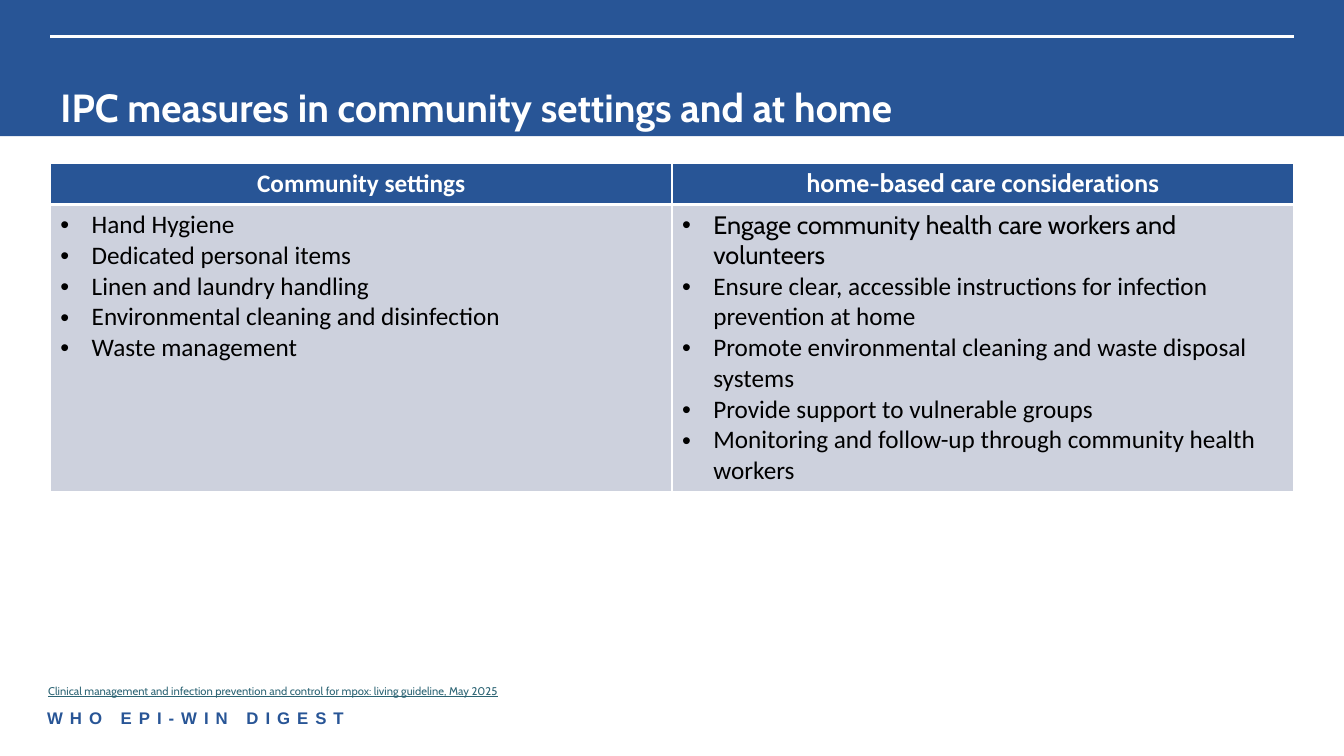
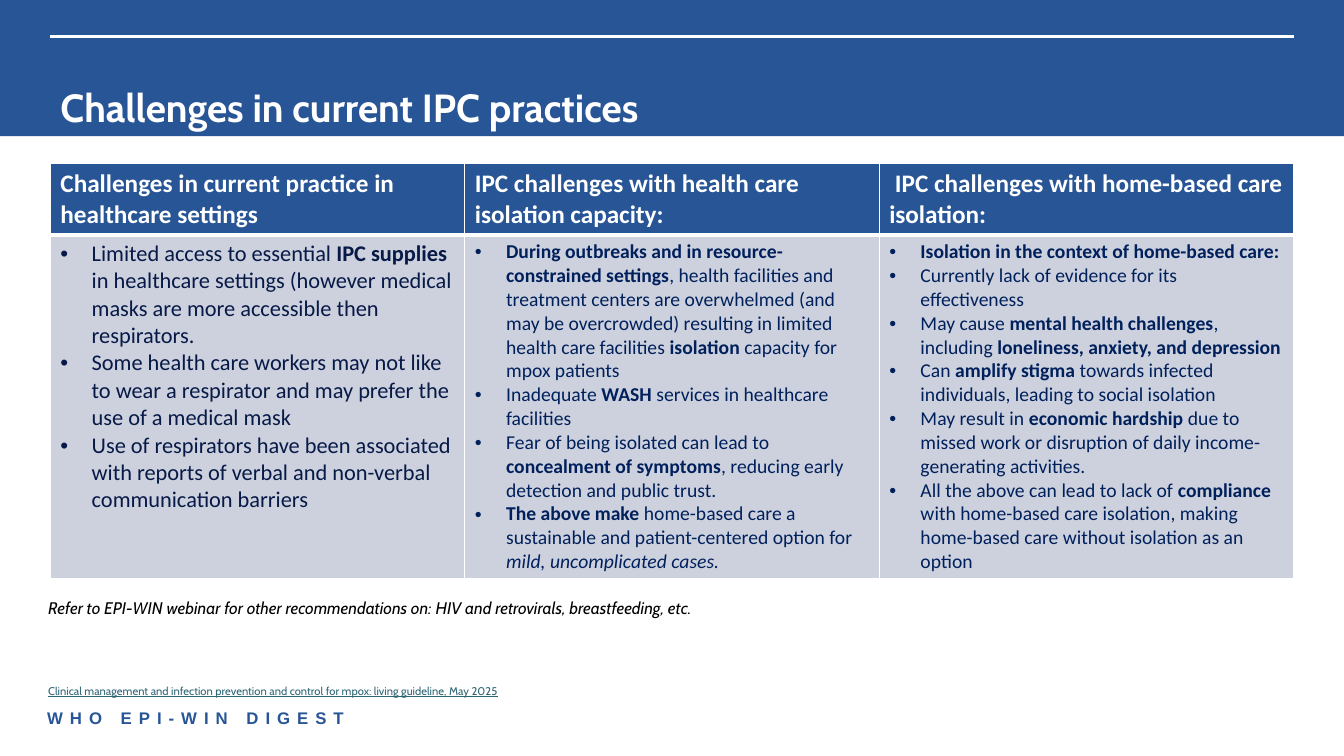
from dataclasses import dataclass
from typing import Any, Optional

import pptx
import pptx.dml.color
import pptx.enum.shapes
import pptx.enum.text
import pptx.oxml.ns
import pptx.oxml.xmlchemy
import pptx.util
from lxml import etree

RGBColor = pptx.dml.color.RGBColor
Inches = pptx.util.Inches
Pt = pptx.util.Pt
PP_ALIGN = pptx.enum.text.PP_ALIGN
MSO_ANCHOR = pptx.enum.text.MSO_ANCHOR
qn = pptx.oxml.ns.qn

BLUE = RGBColor(0x28, 0x55, 0x96)
WHITE = RGBColor(0xFF, 0xFF, 0xFF)
BLACK = RGBColor(0, 0, 0)
PALE = RGBColor(0xCD, 0xD1, 0xDD)
TEAL = RGBColor(0x2C, 0x64, 0x74)
NAVY = RGBColor(0x07, 0x19, 0x47)
DEEP_BLUE = RGBColor(0x00, 0x20, 0x5C)

TITLE_ONLY = 5
WIDTH = 13.33
MARGIN = 0.5
CONTENT_W = WIDTH - 2 * MARGIN
BAND_H = 1.35
TABLE_TOP = 1.62
BULLET_INDENT = 0.31

SOURCE = ("Clinical management and infection prevention and control for mpox: "
          "living guideline, May 2025")


@dataclass(frozen=True)
class Run:
    text: str
    bold: bool = False
    italic: bool = False
    font: str = "Calibri"


@dataclass(frozen=True)
class Column:
    heading: Run
    items: list[list[Run]]
    size: float = 18
    color: RGBColor = BLACK


@dataclass(frozen=True)
class TableSlide:
    title: str
    columns: list[Column]
    row_heights: tuple[float, float]
    heading_align: PP_ALIGN = PP_ALIGN.LEFT
    note: Optional[str] = None


def plain(text: str) -> Run:
    return Run(text)


def bold(text: str) -> Run:
    return Run(text, bold=True)


COMMUNITY = TableSlide(
    "IPC measures in community settings and at home",
    [
        Column(bold("Community settings"), [
            [plain("Hand Hygiene")],
            [plain("Dedicated personal items")],
            [plain("Linen and laundry handling")],
            [plain("Environmental cleaning and disinfection")],
            [plain("Waste management")],
        ]),
        Column(Run("home-based care considerations", bold=True, font="Cabin"), [
            [Run("Engage community health care workers and volunteers", font="Cabin")],
            [plain("Ensure clear, accessible instructions for infection prevention at home")],
            [plain("Promote environmental cleaning and waste disposal systems")],
            [plain("Provide support to vulnerable groups")],
            [plain("Monitoring and follow-up through community health workers")],
        ]),
    ],
    row_heights=(0.41, 2.8),
    heading_align=PP_ALIGN.CENTER,
)

CHALLENGES = TableSlide(
    "Challenges in current IPC practices",
    [
        Column(bold("Challenges in current practice in healthcare settings"), [
            [plain("Limited access to essential "), bold("IPC supplies "),
             plain("in healthcare settings (however medical masks are more "
                   "accessible then respirators.")],
            [plain("Some health care workers may not like to wear a respirator "
                   "and may prefer the use of a medical mask")],
            [plain("Use of respirators have been associated with reports of "
                   "verbal and non-verbal communication barriers")],
        ], 16, NAVY),
        Column(bold("IPC challenges with health care isolation capacity:"), [
            [bold("During outbreaks and in resource-constrained settings"),
             plain(", health facilities and treatment centers are overwhelmed "
                   "(and may be overcrowded) resulting in limited health care facilities "),
             bold("isolation"), plain(" capacity for mpox patients")],
            [plain("Inadequate "), bold("WASH"), plain(" services in healthcare facilities")],
            [plain("Fear of being isolated can lead to "), bold("concealment of symptoms"),
             plain(", reducing early detection and public trust.")],
            [bold("The above make "),
             plain("home-based care a sustainable and patient-centered option for "),
             Run("mild, uncomplicated cases.", italic=True)],
        ], 14, DEEP_BLUE),
        Column(bold(" IPC challenges with home-based care isolation:"), [
            [bold("Isolation in the context of home-based care:")],
            [plain("Currently lack of evidence for its effectiveness")],
            [plain("May cause "), bold("mental health challenges"), plain(", including "),
             bold("loneliness, anxiety, and depression")],
            [plain("Can "), bold("amplify stigma"),
             plain(" towards infected individuals, leading to social isolation")],
            [plain("May result in "), bold("economic hardship"),
             plain(" due to missed work or disruption of daily income-generating activities.")],
            [plain("All the above can lead to lack of "), bold("compliance "),
             plain("with home-based care isolation, making home-based care "
                   "without isolation as an option")],
        ], 14, DEEP_BLUE),
    ],
    row_heights=(0.71, 3.36),
    note="Refer to EPI-WIN webinar for other recommendations on: "
         "HIV and retrovirals, breastfeeding, etc.",
)


def add_run(p: Any, text: str, *, size: float, color: RGBColor, font: str = "Cabin",
            bold: bool = False, italic: bool = False, underline: bool = False,
            spacing: float = 0) -> None:
    """Append formatted text to a paragraph; spacing is letter spacing in points."""
    r = p.add_run()
    r.text = text
    r.font.size, r.font.name = Pt(size), font
    r.font.bold, r.font.italic, r.font.underline = bold, italic, underline
    r.font.color.rgb = color
    if spacing:
        r.font._element.set("spc", str(int(spacing * 100)))


def add_label(slide: Any, left: float, top: float, width: float, height: float,
              text: str, **style: Any) -> None:
    sp = slide.shapes.add_textbox(Inches(left), Inches(top), Inches(width), Inches(height))
    tf = sp.text_frame
    tf.word_wrap = True
    add_run(tf.paragraphs[0], text, **style)


def add_bullet(p: Any) -> None:
    indent = Inches(BULLET_INDENT)
    p_pr = p._p.get_or_add_pPr()
    p_pr.set("marL", str(indent))
    p_pr.set("indent", str(-indent))
    etree.SubElement(p_pr, qn("a:buFont")).set("typeface", "Arial")
    etree.SubElement(p_pr, qn("a:buChar")).set("char", "•")


def set_borders(cell: Any, top: float = 1, bottom: float = 1) -> None:
    """Give a cell white borders; widths in points, sides always 1."""
    tc_pr = cell._tc.get_or_add_tcPr()
    sides = {"lnL": 1, "lnR": 1, "lnT": top, "lnB": bottom}
    for i, (tag, width) in enumerate(sides.items()):
        ln = etree.Element(qn(f"a:{tag}"), w=str(Pt(width)))
        fill = etree.SubElement(ln, qn("a:solidFill"))
        etree.SubElement(fill, qn("a:srgbClr")).set("val", str(WHITE))
        tc_pr.insert(i, ln)


def fill_cell(cell: Any, color: RGBColor) -> Any:
    cell.fill.solid()
    cell.fill.fore_color.rgb = color
    return cell.text_frame


def add_comparison_table(slide: Any, content: TableSlide) -> None:
    columns = content.columns
    table = slide.shapes.add_table(
        2, len(columns), Inches(MARGIN), Inches(TABLE_TOP),
        Inches(CONTENT_W), Inches(sum(content.row_heights))).table
    table.horz_banding = False
    for row, height in zip(table.rows, content.row_heights):
        row.height = Inches(height)
    for i, column in enumerate(columns):
        table.columns[i].width = Inches(CONTENT_W / len(columns))
        head, body = table.cell(0, i), table.cell(1, i)

        p = fill_cell(head, BLUE).paragraphs[0]
        p.alignment = content.heading_align
        add_run(p, column.heading.text, size=18, color=WHITE,
                font=column.heading.font, bold=True)
        set_borders(head, bottom=3)

        tf = fill_cell(body, PALE)
        for j, item in enumerate(column.items):
            p = tf.add_paragraph() if j else tf.paragraphs[0]
            add_bullet(p)
            for run in item:
                add_run(p, run.text, size=column.size, color=column.color,
                        font=run.font, bold=run.bold, italic=run.italic)
        set_borders(body, top=3)


def add_frame(slide: Any) -> None:
    """Draw the footer, the title band and the rule across it."""
    add_label(slide, 0.37, 6.97, 5.2, 0.3, "WHO EPI-WIN DIGEST",
              size=12, color=BLUE, font="Arial", bold=True, spacing=5)
    band = slide.shapes.add_shape(pptx.enum.shapes.MSO_SHAPE.RECTANGLE,
                                  0, 0, Inches(WIDTH), Inches(BAND_H))
    band.shadow.inherit = False
    band.fill.solid()
    band.fill.fore_color.rgb = BLUE
    band.line.fill.background()
    rule = slide.shapes.add_connector(
        pptx.enum.shapes.MSO_CONNECTOR.STRAIGHT,
        Inches(MARGIN), Inches(0.36), Inches(WIDTH - MARGIN), Inches(0.36))
    rule.line.color.rgb = WHITE
    rule.line.width = Pt(2.25)
    etree.SubElement(rule._element.spPr, qn("a:effectLst"))


def set_title(slide: Any, text: str) -> None:
    """Format the title placeholder and bring it in front of the band."""
    sp = slide.shapes.title
    sp.left, sp.top = Inches(MARGIN), Inches(0.4)
    sp.width, sp.height = Inches(CONTENT_W), Inches(BAND_H - 0.4)
    tf = sp.text_frame
    tf.word_wrap = True
    tf.auto_size = pptx.enum.text.MSO_AUTO_SIZE.NONE
    tf.vertical_anchor = MSO_ANCHOR.BOTTOM
    p = tf.paragraphs[0]
    p.alignment = PP_ALIGN.LEFT
    p.line_spacing = 0.9
    add_run(p, text, size=28, color=WHITE, bold=True)
    slide.shapes.element.append(sp.element)


def add_table_slide(prs: Any, content: TableSlide) -> None:
    slide = prs.slides.add_slide(prs.slide_layouts[TITLE_ONLY])
    add_frame(slide)
    set_title(slide, content.title)
    add_comparison_table(slide, content)
    if content.note:
        add_label(slide, 0.38, 5.88, 8.55, 0.3, content.note,
                  size=12, color=BLACK, italic=True)
    add_label(slide, 0.38, 6.74, 4.74, 0.24, SOURCE, size=8, color=TEAL, underline=True)


def main() -> None:
    prs = pptx.Presentation()
    prs.slide_width, prs.slide_height = Inches(WIDTH), Inches(7.5)
    for content in (COMMUNITY, CHALLENGES):
        add_table_slide(prs, content)
    prs.save("out.pptx")


if __name__ == "__main__":
    main()
